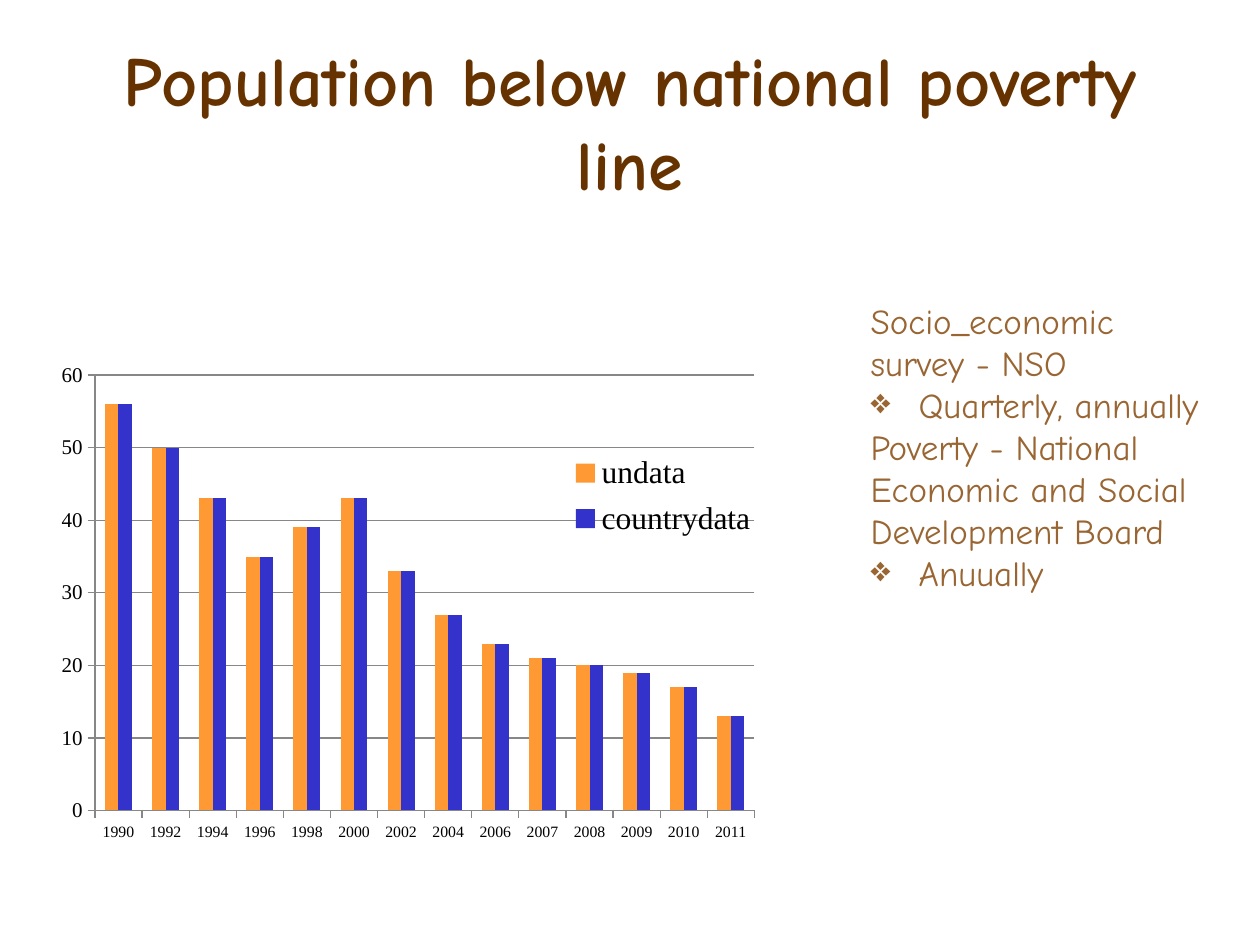
from dataclasses import dataclass

from lxml.etree import SubElement
from pptx import Presentation
from pptx.chart.data import CategoryChartData as ChartData
from pptx.dml.color import RGBColor as Rgb
from pptx.enum.chart import XL_CHART_TYPE as Kind
from pptx.enum.chart import XL_LEGEND_POSITION as Side
from pptx.enum.chart import XL_TICK_MARK as Tick
from pptx.enum.text import MSO_ANCHOR as Anchor
from pptx.enum.text import PP_ALIGN as Align
from pptx.oxml.ns import qn
from pptx.util import Cm, Pt


@dataclass(frozen=True)
class Theme:
    hand: str = "Comic Neue"
    serif: str = "Times New Roman"
    title: str = "663300"
    note: str = "996633"
    ink: str = "000000"
    grid: str = "878787"
    bars: tuple = ("FF9933", "3333CC")
    title_pt: int = 40
    note_pt: int = 20
    key_pt: int = 18
    val_pt: int = 12
    cat_pt: int = 9


@dataclass(frozen=True)
class Box:
    left: float
    top: float
    width: float
    height: float

    def cm(self) -> tuple:
        return tuple(Cm(n) for n in (self.left, self.top, self.width, self.height))


@dataclass(frozen=True)
class Line:
    text: str
    bullet: bool = False


THEME = Theme()
YEARS = (*range(1990, 2007, 2), *range(2007, 2012))
RATES = (56, 50, 43, 35, 39, 43, 33, 27, 23, 21, 20, 19, 17, 13)
NAMES = ("undata", "countrydata")
NOTES = (
    Line("Socio_economic survey - NSO"),
    Line("Quarterly, annually", True),
    Line("Poverty - National Economic and Social Development Board"),
    Line("Anuually", True),
)


def style(item, **values) -> None:
    for key, value in values.items():
        setattr(item, key, value)


def ink(font, name: str, size: int, color: str, bold: bool = False) -> None:
    style(font, name=name, size=Pt(size), bold=bold)
    font.color.rgb = Rgb.from_string(color)


def mark(para) -> None:
    """Give the paragraph a diamond bullet with a hanging indent."""
    props = para._p.get_or_add_pPr()
    props.set("marL", str(Cm(0.97)))
    props.set("indent", str(-Cm(0.97)))
    SubElement(props, qn("a:buChar")).set("char", "❖")


def add_text(slide, box: Box, lines: tuple, look: dict, frame: dict,
             align: Align = Align.LEFT) -> None:
    text = slide.shapes.add_textbox(*box.cm()).text_frame
    style(text, word_wrap=True, **frame)
    for i, line in enumerate(lines):
        para = text.paragraphs[0] if i == 0 else text.add_paragraph()
        para.alignment = align
        if line.bullet:
            mark(para)
        run = para.add_run()
        run.text = line.text
        ink(run.font, **look)


def place(part, spots: dict, inner: bool = False) -> None:
    """Fix a chart part at fractions of the chart's size."""
    layout = part.find(qn("c:layout"))
    if layout is None:
        layout = SubElement(part, qn("c:layout"))
        part.remove(layout)
        part.insert(1 if part.tag == qn("c:legend") else 0, layout)
    manual = SubElement(layout, qn("c:manualLayout"))
    values = {"layoutTarget": "inner"} if inner else {}
    values |= {"xMode": "edge", "yMode": "edge"} | spots
    for key, value in values.items():
        SubElement(manual, qn(f"c:{key}")).set("val", str(value))


def add_bars(slide, box: Box) -> None:
    data = ChartData()
    data.categories = [str(year) for year in YEARS]
    for name in NAMES:
        data.add_series(name, RATES)
    chart = slide.shapes.add_chart(Kind.COLUMN_CLUSTERED, *box.cm(), data).chart
    style(chart, has_title=False, has_legend=True)
    ink(chart.font, THEME.serif, THEME.key_pt, THEME.ink)

    plot = chart.plots[0]
    style(plot, gap_width=150, overlap=0, vary_by_categories=False)
    for bars, color in zip(plot.series, THEME.bars):
        bars.format.fill.solid()
        bars.format.fill.fore_color.rgb = Rgb.from_string(color)

    val, cat = chart.value_axis, chart.category_axis
    style(val, minimum_scale=0, maximum_scale=60, major_unit=10,
          has_major_gridlines=True)
    cat.has_major_gridlines = False
    for axis, size in ((val, THEME.val_pt), (cat, THEME.cat_pt)):
        style(axis, major_tick_mark=Tick.OUTSIDE, minor_tick_mark=Tick.NONE)
        ink(axis.tick_labels.font, THEME.serif, size, THEME.ink)
    for part in (val, cat, val.major_gridlines):
        part.format.line.width = Pt(0.75)
        part.format.line.color.rgb = Rgb.from_string(THEME.grid)

    key = chart.legend
    style(key, position=Side.RIGHT, include_in_layout=False)
    ink(key.font, THEME.serif, THEME.key_pt, THEME.ink)
    place(key._element, {"x": 0.66, "y": 0.16, "w": 0.24, "h": 0.18})
    area = chart._chartSpace.chart.plotArea
    place(area, {"x": 0.064, "y": 0.037, "w": 0.831, "h": 0.768}, inner=True)


def main() -> None:
    deck = Presentation()
    style(deck, slide_width=Cm(25.4), slide_height=Cm(19.05))
    slide = deck.slides.add_slide(deck.slide_layouts[6])
    add_bars(slide, Box(0.89, 7.14, 16, 11.43))
    add_text(
        slide, Box(1.9, 1.7, 21.59, 3.18),
        (Line("Population below national poverty line"),),
        dict(name=THEME.hand, size=THEME.title_pt, color=THEME.title, bold=True),
        dict(vertical_anchor=Anchor.MIDDLE, margin_bottom=Cm(1.83)), Align.CENTER)
    add_text(
        slide, Box(17.3, 5.92, 7.39, 10.52), NOTES,
        dict(name=THEME.hand, size=THEME.note_pt, color=THEME.note),
        dict(vertical_anchor=Anchor.TOP))
    deck.save("out.pptx")


if __name__ == "__main__":
    main()
